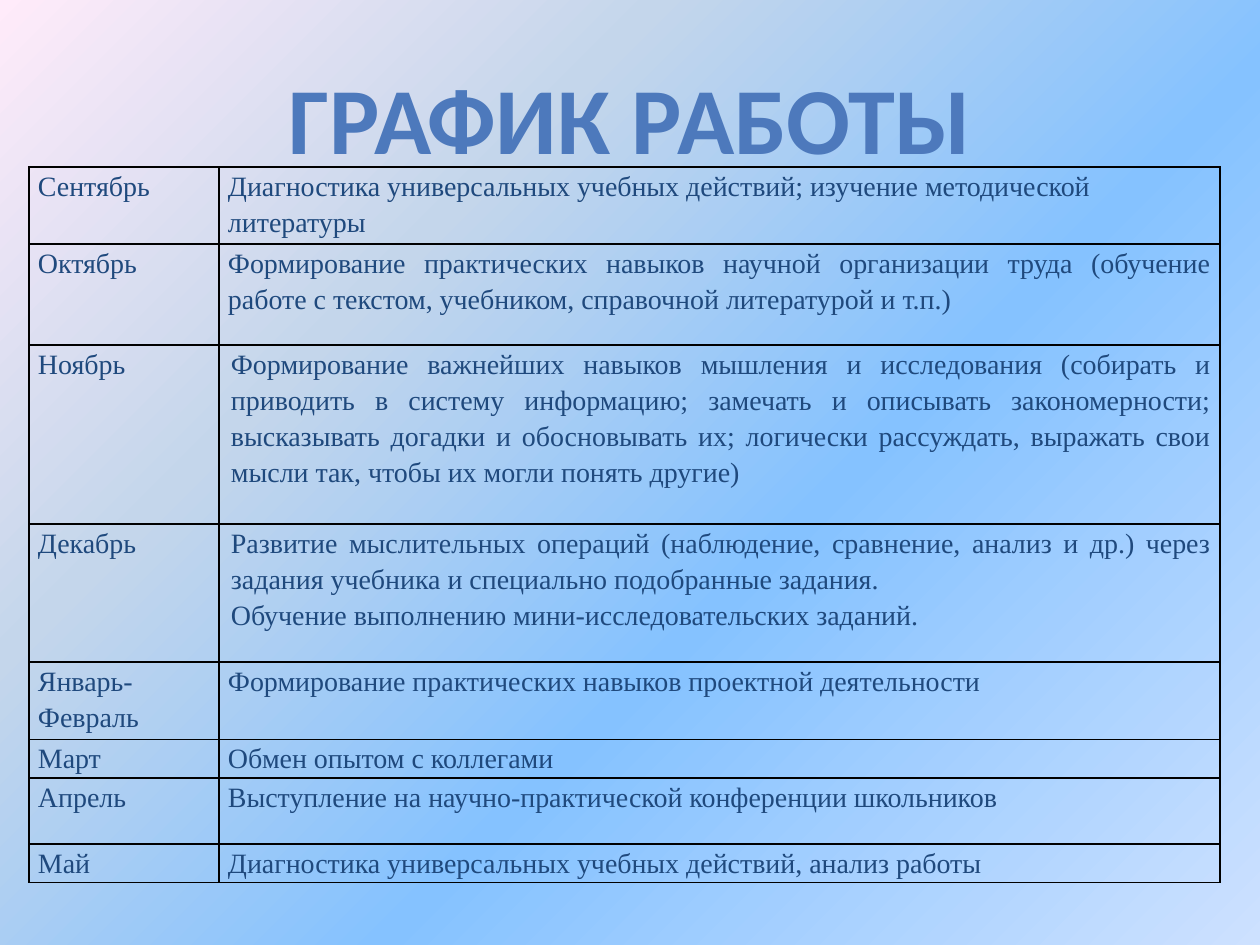
from dataclasses import dataclass

from lxml import etree
from pptx import Presentation
from pptx import util as u
from pptx.dml import color
from pptx.enum import text
from pptx.oxml import ns

PX = 914400 // 126


@dataclass(frozen=True)
class Theme:
    heading_font: str = "Calibri"
    body_font: str = "Times New Roman"
    heading_size: int = 54
    body_size: int = 16
    body_color: str = "1F497D"
    border_color: str = "000000"
    border_pt: int = 1
    line_spacing: float = 1.15
    background: tuple = ((0, "CDE1FF"), (40, "85C2FF"), (70, "C4D6EB"), (100, "FFEBFA"))
    heading: tuple = ((0, "7494C9"), (49, "4D79BC"), (50, "346AAA"), (92, "325F94"),
                      (100, "315D91"))


@dataclass(frozen=True)
class Period:
    month: str
    work: str
    height: int
    justified: bool = False
    indent: int = 0


THEME = Theme()
COLUMN_WIDTHS = (190, 1001)
SCHEDULE = (
    Period("Сентябрь", "Диагностика универсальных учебных действий; изучение методической "
           "литературы", 71),
    Period("Октябрь", "Формирование практических навыков научной организации труда (обучение "
           "работе с текстом, учебником, справочной литературой и т.п.)", 101, True),
    Period("Ноябрь", "Формирование важнейших навыков мышления и исследования (собирать и "
           "приводить в систему информацию; замечать и описывать закономерности; "
           "высказывать догадки и обосновывать их; логически рассуждать, выражать свои "
           "мысли так, чтобы их могли понять другие)", 179, True, 3),
    Period("Декабрь", "Развитие мыслительных операций (наблюдение, сравнение, анализ и др.) "
           "через задания учебника и специально подобранные задания.\n"
           "Обучение выполнению мини-исследовательских заданий.", 138, True, 3),
    Period("Январь- Февраль", "Формирование практических навыков проектной деятельности", 71),
    Period("Март", "Обмен опытом с коллегами", 36),
    Period("Апрель", "Выступление на научно-практической конференции школьников", 66),
    Period("Май", "Диагностика универсальных учебных действий, анализ работы", 36),
)


def px(length: int) -> u.Emu:
    return u.Emu(length * PX)


def add_part(parent, tag: str, **attributes):
    return etree.SubElement(parent, ns.qn(tag),
                            {name: str(value) for name, value in attributes.items()})


def set_stops(gradient, stops: tuple) -> None:
    """Empty a gradient fill and give it new stops, leaving its direction to the caller."""
    for part in list(gradient):
        gradient.remove(part)
    stop_list = add_part(gradient, "a:gsLst")
    for percent, rgb in stops:
        stop = add_part(stop_list, "a:gs", pos=percent * 1000)
        add_part(stop, "a:srgbClr", val=rgb)


def paint_background(slide) -> None:
    slide.background.fill.gradient()
    gradient = slide.element.find(".//" + ns.qn("a:gradFill"))
    set_stops(gradient, THEME.background)
    circle = add_part(gradient, "a:path", path="circle")
    add_part(circle, "a:fillToRect", l=100000, t=100000)


def add_heading(slide, wording: str) -> None:
    heading = slide.shapes.add_textbox(px(63), px(38), px(1134), px(157))
    frame = heading.text_frame
    frame.word_wrap = True
    frame.vertical_anchor = text.MSO_ANCHOR.MIDDLE
    frame.text = wording
    line = frame.paragraphs[0]
    line.alignment = text.PP_ALIGN.CENTER
    font = line.runs[0].font
    font.name, font.size, font.bold = THEME.heading_font, u.Pt(THEME.heading_size), True
    font.fill.gradient()
    gradient = heading.element.find(".//" + ns.qn("a:gradFill"))
    set_stops(gradient, THEME.heading)
    add_part(gradient, "a:lin", ang=90 * 60000, scaled=0)


def add_borders(cell) -> None:
    properties = cell._tc.get_or_add_tcPr()
    for side in "LRTB":
        border = add_part(properties, f"a:ln{side}", w=u.Pt(THEME.border_pt))
        add_part(add_part(border, "a:solidFill"), "a:srgbClr", val=THEME.border_color)


def fill_cell(cell, wording: str, justified: bool = False, indent: int = 0) -> None:
    add_borders(cell)
    cell.fill.background()
    cell.margin_left = cell.margin_right = px(9)
    cell.margin_top = cell.margin_bottom = 0
    cell.text_frame.text = wording
    for paragraph in cell.text_frame.paragraphs:
        paragraph.line_spacing = THEME.line_spacing
        paragraph.alignment = text.PP_ALIGN.JUSTIFY if justified else text.PP_ALIGN.LEFT
        if indent:
            paragraph._p.get_or_add_pPr().set("marL", str(px(indent)))
        for run in paragraph.runs:
            run.font.name, run.font.size = THEME.body_font, u.Pt(THEME.body_size)
            run.font.color.rgb = color.RGBColor.from_string(THEME.body_color)


def add_schedule(slide, periods: tuple) -> None:
    schedule = slide.shapes.add_table(
        len(periods), len(COLUMN_WIDTHS), px(29), px(167), px(sum(COLUMN_WIDTHS)),
        px(sum(period.height for period in periods))).table
    schedule.first_row = schedule.horz_banding = False
    for column, width in zip(schedule.columns, COLUMN_WIDTHS):
        column.width = px(width)
    for row, period in zip(schedule.rows, periods):
        row.height = px(period.height)
        month_cell, work_cell = row.cells
        fill_cell(month_cell, period.month)
        fill_cell(work_cell, period.work, period.justified, period.indent)


def main() -> None:
    deck = Presentation()
    deck.slide_width, deck.slide_height = u.Inches(10), u.Inches(7.5)
    slide = deck.slides.add_slide(deck.slide_layouts[6])
    paint_background(slide)
    add_heading(slide, "ГРАФИК РАБОТЫ")
    add_schedule(slide, SCHEDULE)
    deck.save("out.pptx")


if __name__ == "__main__":
    main()
